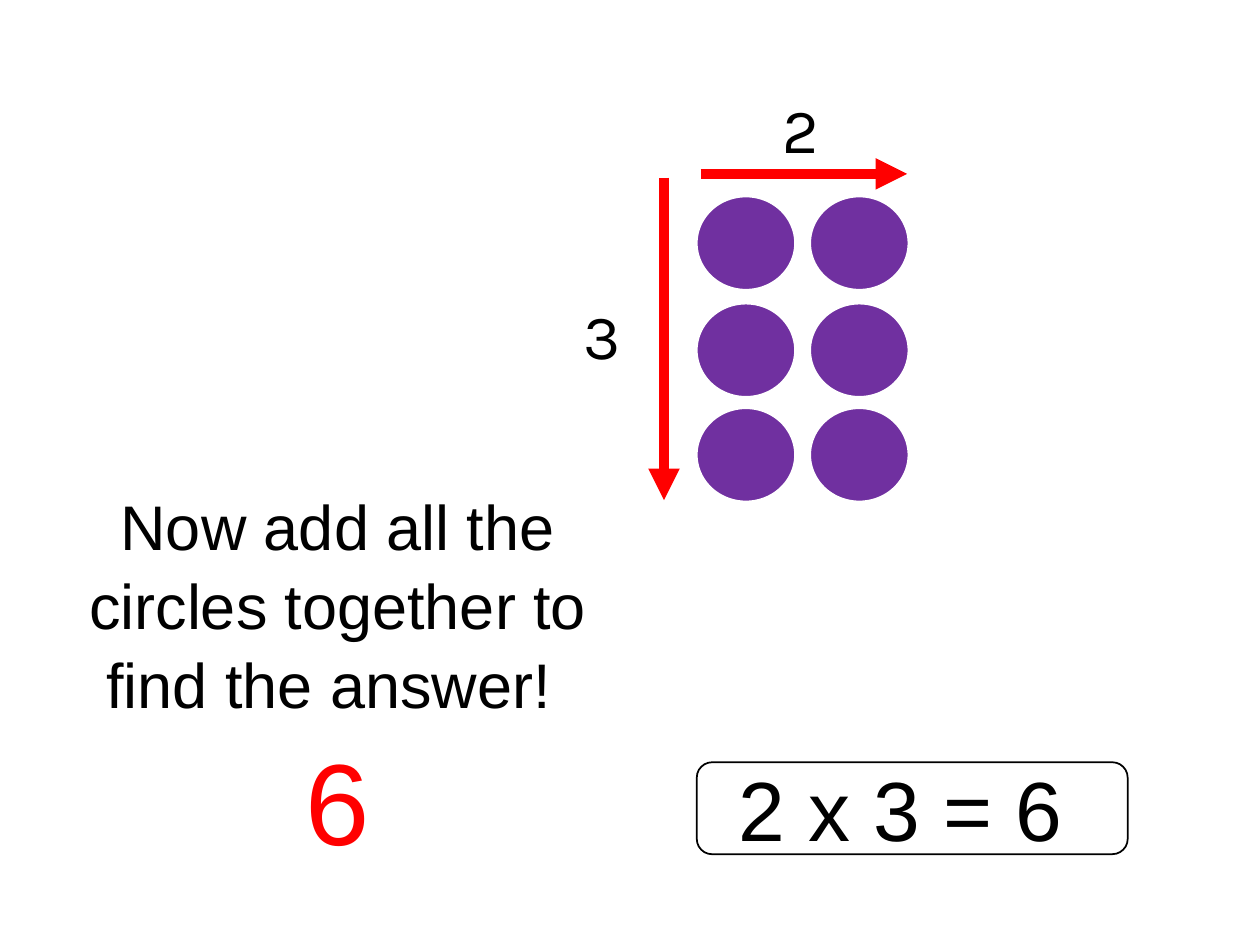
"""Build a slide that shows 2 x 3 = 6 as an array of circles."""
from lxml import etree
from pptx import Presentation
from pptx.dml.color import RGBColor
from pptx.enum.shapes import MSO_CONNECTOR, MSO_SHAPE
from pptx.enum.text import MSO_ANCHOR, PP_ALIGN
from pptx.oxml.ns import qn
from pptx.util import Inches, Pt

STRAIGHT = MSO_CONNECTOR.STRAIGHT
OVAL = MSO_SHAPE.OVAL
ROUNDED_RECTANGLE = MSO_SHAPE.ROUNDED_RECTANGLE
MIDDLE = MSO_ANCHOR.MIDDLE
LEFT = PP_ALIGN.LEFT
CENTER = PP_ALIGN.CENTER
BLACK = RGBColor(0x00, 0x00, 0x00)
WHITE = RGBColor(0xFF, 0xFF, 0xFF)
RED = RGBColor(0xFF, 0x00, 0x00)
PURPLE = RGBColor(0x70, 0x30, 0xA0)


def format_paragraph(paragraph, size, font_name="Arial", color=BLACK, alignment=CENTER):
    paragraph.alignment = alignment
    for run in paragraph.runs:
        run.font.size = Pt(size)
        run.font.name = font_name
        run.font.color.rgb = color


def add_filled_shape(kind, left, top, width, height, fill, line):
    shape = slide.shapes.add_shape(kind, Inches(left), Inches(top), Inches(width), Inches(height))
    shape.shadow.inherit = False
    shape.fill.solid()
    shape.fill.fore_color.rgb = fill
    shape.line.color.rgb = line
    shape.line.width = Pt(1)
    return shape


presentation = Presentation()
presentation.slide_width = Inches(10)
presentation.slide_height = Inches(7.5)
slide = presentation.slides.add_slide(presentation.slide_layouts[6])

for top in (1.56, 2.41, 3.24):
    for left in (5.53, 6.43):
        add_filled_shape(OVAL, left, top, 0.78, 0.74, PURPLE, WHITE)

instruction = slide.shapes.add_textbox(Inches(0.2), Inches(3.8), Inches(4.96), Inches(3.03))
text_frame = instruction.text_frame
text_frame.word_wrap = True
text_frame.text = "Now add all the circles together to find the answer! \n6"
for paragraph, size, color in zip(text_frame.paragraphs, (36, 66), (BLACK, RED)):
    format_paragraph(paragraph, size, color=color)
    paragraph.line_spacing = 1.04
    paragraph.space_before = Pt(2)

for start_x, start_y, end_x, end_y in ((5.56, 1.38, 7.2, 1.38), (5.27, 1.41, 5.27, 3.97)):
    arrow = slide.shapes.add_connector(
        STRAIGHT, Inches(start_x), Inches(start_y), Inches(end_x), Inches(end_y))
    arrow.line.color.rgb = RED
    arrow.line.width = Pt(6)
    etree.SubElement(arrow.line._get_or_add_ln(), qn("a:tailEnd"), type="triangle")
    etree.SubElement(arrow._element.spPr, qn("a:effectLst"))

for count, left, top in (("2", 6.11, 0.67), ("3", 4.53, 2.3)):
    label = slide.shapes.add_textbox(Inches(left), Inches(top), Inches(0.63), Inches(0.71))
    label.text_frame.word_wrap = True
    label.text_frame.text = count
    format_paragraph(label.text_frame.paragraphs[0], 36, "Karla", alignment=LEFT)

equation = add_filled_shape(ROUNDED_RECTANGLE, 5.53, 6.05, 3.42, 0.73, WHITE, BLACK)
equation.text_frame.vertical_anchor = MIDDLE
equation.text_frame.text = "2 x 3 = 6 "
format_paragraph(equation.text_frame.paragraphs[0], 48)

presentation.save("out.pptx")
